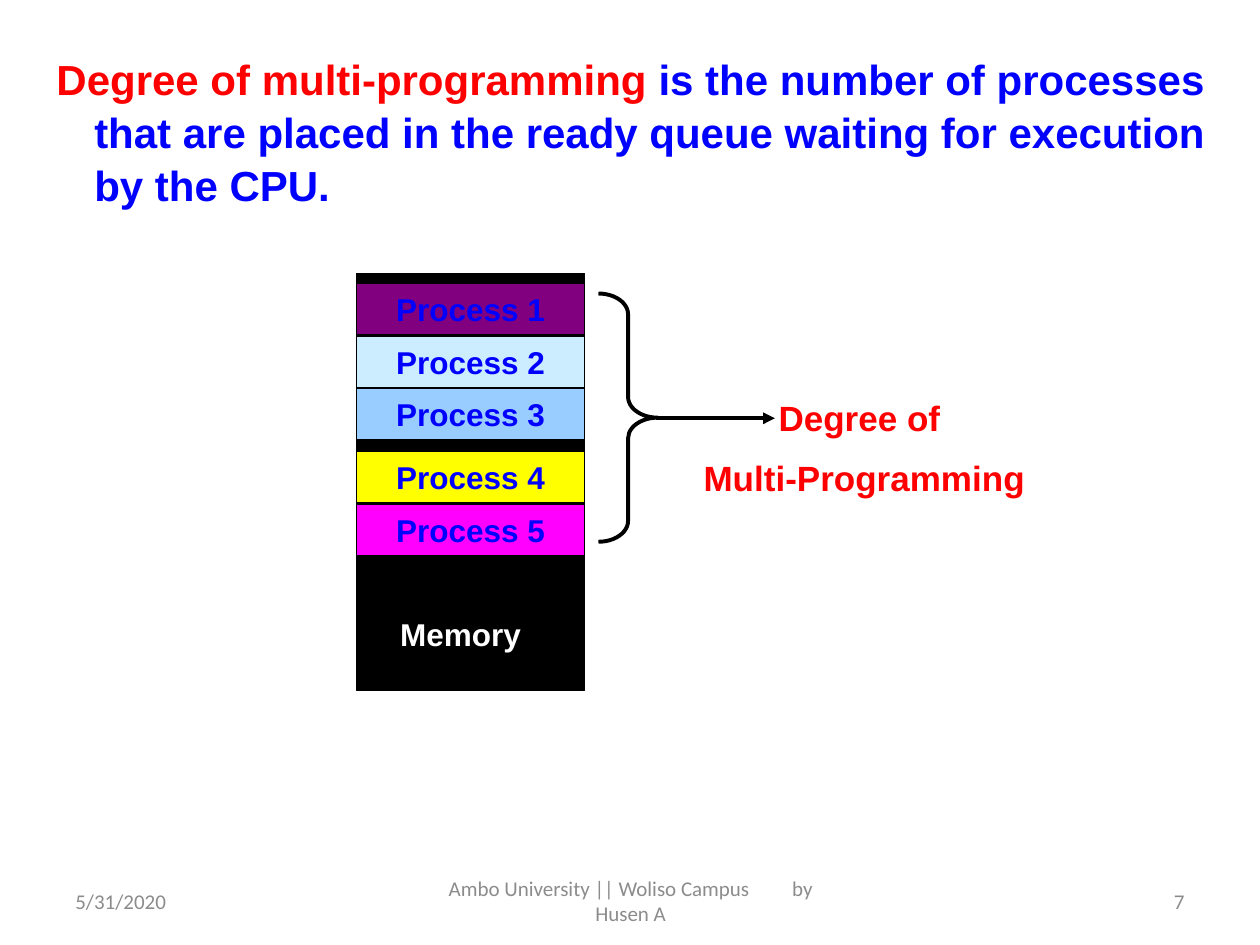
from lxml import etree
from pptx import Presentation
from pptx.dml.color import RGBColor
from pptx.enum.shapes import MSO_CONNECTOR, MSO_SHAPE
from pptx.enum.text import MSO_ANCHOR, PP_ALIGN
from pptx.oxml.ns import qn
from pptx.util import Inches, Pt

LEFT, CENTER, RIGHT = PP_ALIGN.LEFT, PP_ALIGN.CENTER, PP_ALIGN.RIGHT
TOP, MIDDLE = MSO_ANCHOR.TOP, MSO_ANCHOR.MIDDLE
RECTANGLE, BRACE = MSO_SHAPE.RECTANGLE, MSO_SHAPE.RIGHT_BRACE
STRAIGHT = MSO_CONNECTOR.STRAIGHT

COLORS = {
    "black": "000000", "white": "FFFFFF", "red": "FF0000", "blue": "0000FF",
    "gray": "8C8C8C", "purple": "800080", "pale": "CCECFF", "sky": "99CCFF",
    "yellow": "FFFF00", "magenta": "FF00FF",
}


def write(shape, paragraphs, size, align=CENTER, anchor=TOP, font="Arial", bold=True):
    frame = shape.text_frame
    frame.word_wrap = True
    frame.vertical_anchor = anchor
    for index, pieces in enumerate(paragraphs):
        paragraph = frame.add_paragraph() if index else frame.paragraphs[0]
        paragraph.alignment = align
        if index:
            paragraph.space_before = Pt(size / 2)
        for text, color in pieces:
            run = paragraph.add_run()
            run.text = text
            run.font.name = font
            run.font.size = Pt(size)
            run.font.bold = bold
            run.font.color.rgb = RGBColor.from_string(COLORS[color])
    return frame


def add_block(kind, left, top, width, height, fill, line_width):
    shape = slide.shapes.add_shape(
        kind, Inches(left), Inches(top), Inches(width), Inches(height))
    shape.shadow.inherit = False
    if fill:
        shape.fill.solid()
        shape.fill.fore_color.rgb = RGBColor.from_string(COLORS[fill])
    else:
        shape.fill.background()
    shape.line.color.rgb = RGBColor.from_string(COLORS["black"])
    shape.line.width = Pt(line_width)
    return shape


presentation = Presentation()
presentation.slide_width = Inches(10)
presentation.slide_height = Inches(7.5)
slide = presentation.slides.add_slide(presentation.slide_layouts[6])

definition = slide.shapes.add_textbox(
    Inches(0.35), Inches(0.36), Inches(9.37), Inches(5.8))
frame = write(definition, [[
    ("Degree of multi-programming ", "red"),
    ("is the number of processes that are placed in the ready queue "
     "waiting for execution by the CPU.", "blue"),
]], 24, LEFT)
paragraph = frame.paragraphs[0]
paragraph.line_spacing = 1.05
properties = paragraph._p.get_or_add_pPr()
properties.set("marL", str(Inches(0.3)))
properties.set("indent", str(Inches(-0.3)))

add_block(RECTANGLE, 2.83, 2.17, 1.81, 3.31, "black", 0.75)
memory_label = slide.shapes.add_textbox(
    Inches(2.92), Inches(4.83), Inches(1.47), Inches(0.4))
write(memory_label, [[("Memory", "white")]], 18)

processes = [(2.25, "purple"), (2.67, "pale"), (3.08, "sky"),
             (3.58, "yellow"), (4, "magenta")]
for number, (top, fill) in enumerate(processes, 1):
    process = add_block(RECTANGLE, 2.83, top, 1.81, 0.41, fill, 0.75)
    write(process, [[(f"Process {number}", "blue")]], 18, anchor=MIDDLE)

brace = add_block(BRACE, 4.75, 2.33, 0.47, 1.97, None, 2.25)
brace.adjustments[0] = 0.35

arrow = slide.shapes.add_connector(
    STRAIGHT, Inches(5.21), Inches(3.32), Inches(6.15), Inches(3.32))
arrow.line.color.rgb = RGBColor.from_string(COLORS["black"])
arrow.line.width = Pt(2.25)
etree.SubElement(arrow.line._get_or_add_ln(), qn("a:tailEnd"), type="triangle")
etree.SubElement(arrow._element.spPr, qn("a:effectLst"))

degree_label = slide.shapes.add_textbox(
    Inches(5.48), Inches(3.1), Inches(2.76), Inches(0.93))
write(degree_label, [[("Degree of ", "red")], [("Multi-Programming", "red")]], 20)

footers = [
    (0.5, 2.33, LEFT, ["5/31/2020"]),
    (7.17, 2.33, RIGHT, ["7"]),
    (3.42, 3.17, CENTER, ["Ambo University || Woliso Campus", " ", "by Husen A"]),
]
for left, width, align, texts in footers:
    footer = slide.shapes.add_textbox(
        Inches(left), Inches(6.95), Inches(width), Inches(0.4))
    frame = write(footer, [[(text, "gray") for text in texts]], 12, align, MIDDLE,
                  "Calibri", False)
campus_gap = frame.paragraphs[0].runs[1]
campus_gap._r.get_or_add_rPr().set("spc", "2150")

presentation.save("out.pptx")
